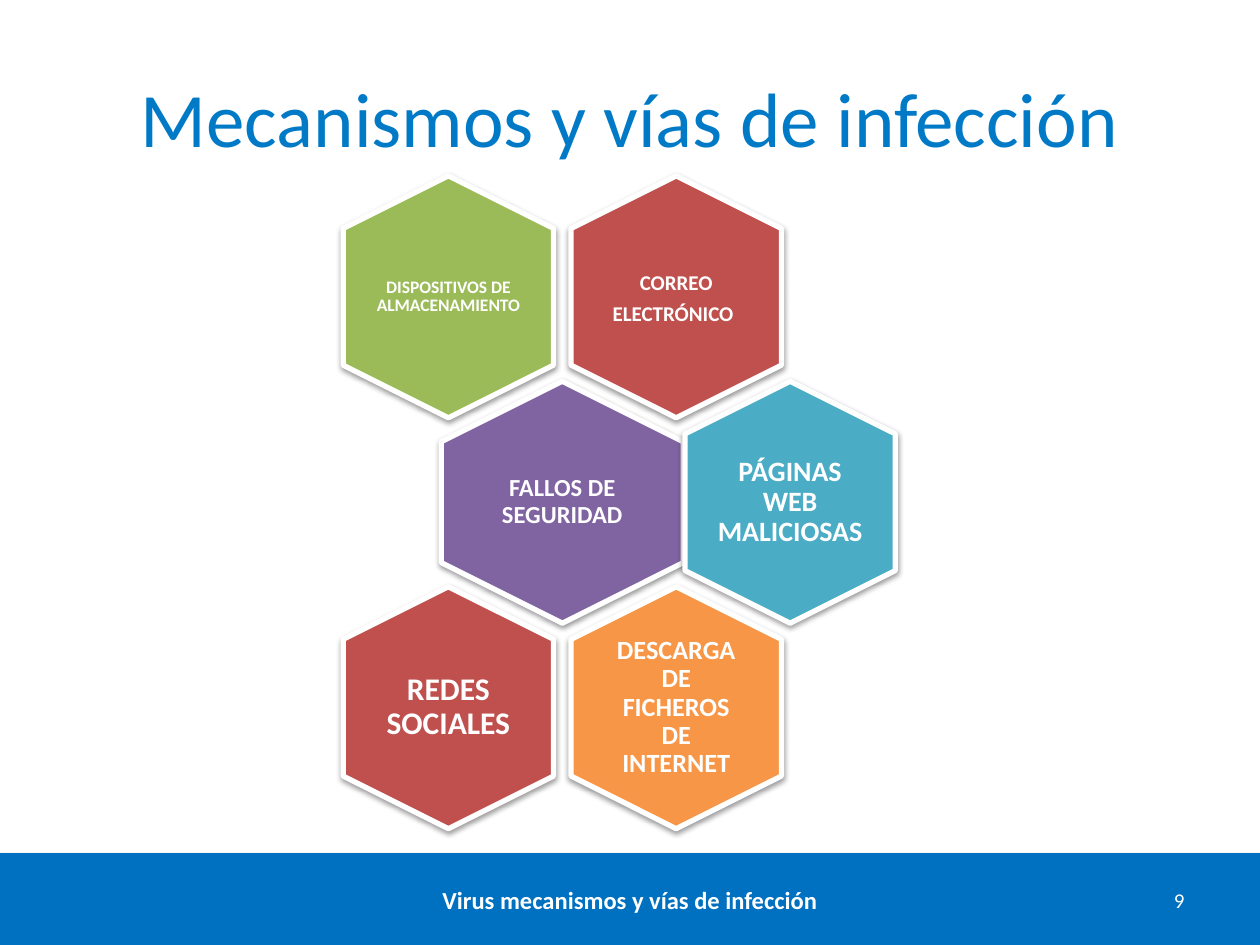
"""Build the slide on infection mechanisms as a honeycomb of six routes."""
from lxml import etree
from pptx import Presentation
from pptx.dml.color import RGBColor
from pptx.enum.shapes import MSO_SHAPE
from pptx.enum.text import MSO_ANCHOR, PP_ALIGN
from pptx.oxml.ns import qn
from pptx.util import Pt

HEXAGON, RECTANGLE = MSO_SHAPE.HEXAGON, MSO_SHAPE.RECTANGLE
MIDDLE = MSO_ANCHOR.MIDDLE
CENTER, RIGHT = PP_ALIGN.CENTER, PP_ALIGN.RIGHT

COLORS = {
    "white": "FFFFFF", "black": "000000", "title": "007AC6", "bar": "0070C0",
    "red": "C0504D", "green": "9BBB59", "purple": "8064A2",
    "aqua": "4BACC6", "orange": "F79646",
}
FONT = "Calibri"
TITLE = "Mecanismos y vías de infección"
FOOTER = "Virus mecanismos y vías de infección"
PAGE = "9"

SLIM, WIDE = (120.24, 82.8, 95.04), (138.24, 92.16, 92.16)
ROUTES = [
    {"runs": [("CORREO", 12), (" ", 16), ("ELECTRÓNICO", 12), (" ", 16)],
     "color": "red", "column": 2, "row": 0, "size": SLIM, "inset": 3.6},
    {"runs": [("DISPOSITIVOS DE ALMACENAMIENTO", 10)],
     "color": "green", "column": 0, "row": 0, "size": SLIM, "inset": 0},
    {"runs": [("FALLOS DE SEGURIDAD", 14)],
     "color": "purple", "column": 1, "row": 1, "size": WIDE, "inset": 4.2},
    {"runs": [("PÁGINAS WEB MALICIOSAS", 16)],
     "color": "aqua", "column": 3, "row": 1, "size": SLIM, "inset": 0},
    {"runs": [("DESCARGA DE FICHEROS DE INTERNET", 15)],
     "color": "orange", "column": 2, "row": 2, "size": SLIM, "inset": 4.2},
    {"runs": [("REDES SOCIALES", 18)],
     "color": "red", "column": 0, "row": 2, "size": SLIM, "inset": 0},
]
HEX_LENGTH = 138.24
FIRST_X, FIRST_Y = 256.2, 169.6
COLUMN_STEP, ROW_STEP = 65.1, 117.4


def rgb(name):
    return RGBColor.from_string(COLORS[name])


def add_runs(paragraph, runs, color, bold=False):
    for wording, size in runs:
        run = paragraph.add_run()
        run.text = wording
        run.font.name, run.font.size, run.font.bold = FONT, Pt(size), bold
        run.font.color.rgb = rgb(color)


def add_panel(slide, preset, box, color, opacity, distance):
    panel = slide.shapes.add_shape(preset, *map(Pt, box))
    panel.fill.solid()
    panel.fill.fore_color.rgb = rgb(color)
    panel.line.fill.background()
    panel.shadow.inherit = False
    effects = panel._element.spPr.find(qn("a:effectLst"))
    shadow = etree.SubElement(
        effects, qn("a:outerShdw"), blurRad=str(Pt(3.1)), dist=str(Pt(distance)),
        dir="5400000", rotWithShape="0")
    tint = etree.SubElement(shadow, qn("a:srgbClr"), val=COLORS["black"])
    etree.SubElement(tint, qn("a:alpha"), val=str(opacity * 1000))
    return panel


def add_label(slide, box, runs, align, bold, insets):
    label = slide.shapes.add_textbox(*map(Pt, box))
    frame = label.text_frame
    frame.word_wrap = True
    frame.vertical_anchor = MIDDLE
    frame.margin_left = frame.margin_right = Pt(insets[0])
    frame.margin_top = frame.margin_bottom = Pt(insets[1])
    paragraph = frame.paragraphs[0]
    paragraph.alignment = align
    add_runs(paragraph, runs, "white", bold)
    return paragraph


def centred(x, y, width, height):
    return x - width / 2, y - height / 2, width, height


def add_route(slide, route):
    x = FIRST_X + COLUMN_STEP * route["column"]
    y = FIRST_Y + ROW_STEP * route["row"]
    breadth, label_width, label_height = route["size"]
    cell = add_panel(slide, HEXAGON, centred(x, y, HEX_LENGTH, breadth),
                     route["color"], 38, 1.6)
    cell.rotation = 90
    cell.adjustments[0] = 0.25
    cell.line.color.rgb = rgb("white")
    cell.line.width = Pt(3)
    paragraph = add_label(slide, centred(x, y, label_width, label_height),
                          route["runs"], CENTER, True, (route["inset"],) * 2)
    paragraph.line_spacing = 0.9


def add_title(slide):
    title = slide.shapes.title
    title.left, title.top, title.width, title.height = map(Pt, (36, 21.6, 648, 90))
    title.text_frame.vertical_anchor = MIDDLE
    paragraph = title.text_frame.paragraphs[0]
    paragraph.alignment = CENTER
    add_runs(paragraph, [(TITLE, 44)], "title")


def main():
    deck = Presentation()
    deck.slide_width, deck.slide_height = Pt(720), Pt(540)
    slide = deck.slides.add_slide(deck.slide_layouts[5])
    add_title(slide)
    add_panel(slide, RECTANGLE, (0, 487.5, 720, 54.5), "bar", 35, 1.8)
    add_label(slide, (600, 500, 84, 28.8), [(PAGE, 12)], RIGHT, False, (7.2, 3.6))
    add_label(slide, (133, 500, 454, 28.8), [(FOOTER, 14)], CENTER, True, (7.2, 3.6))
    for route in ROUTES:
        add_route(slide, route)
    deck.save("out.pptx")


if __name__ == "__main__":
    main()
